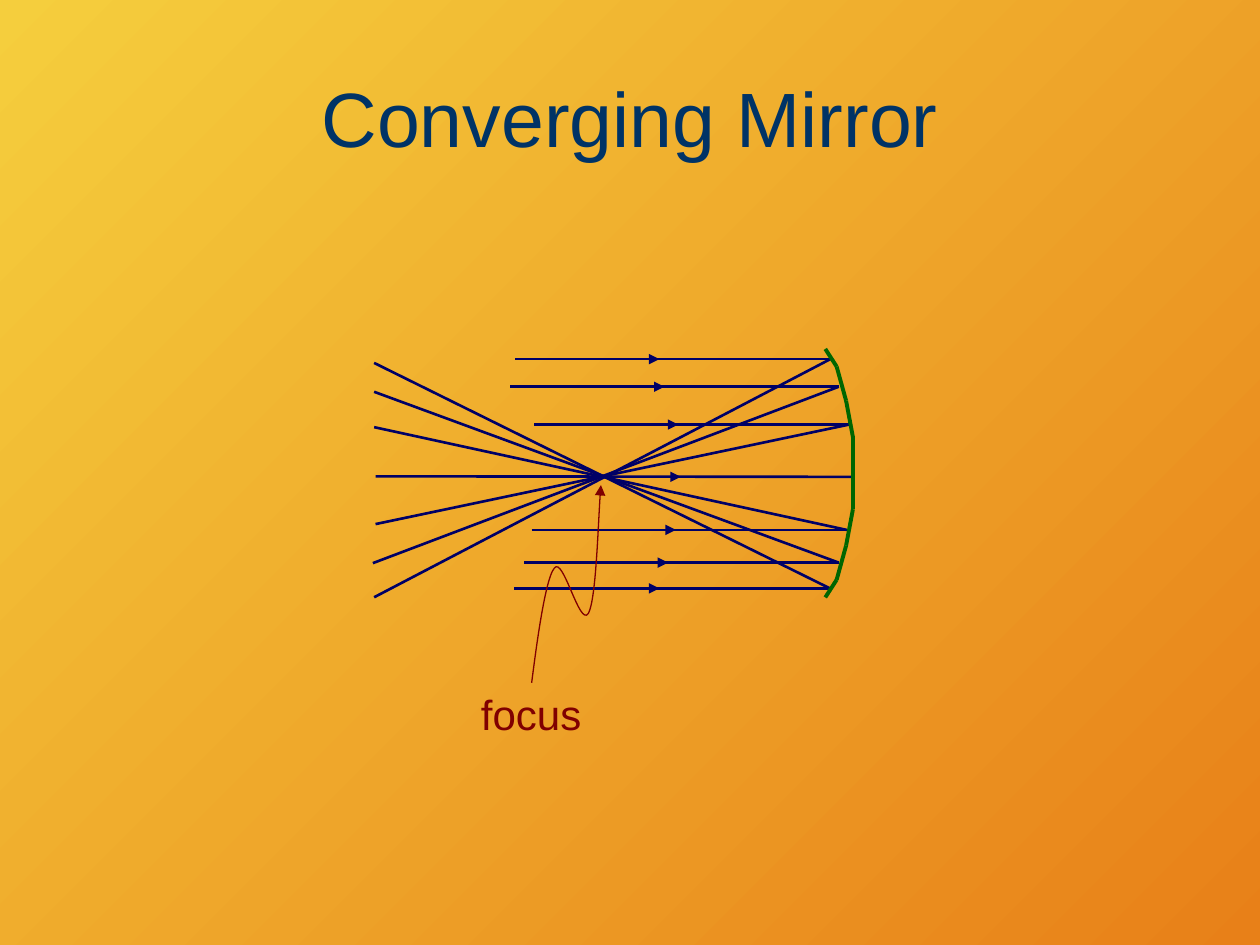
import pptx
import pptx.util
import pptx.dml.color
import pptx.enum.shapes
import pptx.enum.text
import pptx.oxml
import pptx.oxml.ns

Pt = pptx.util.Pt
qn = pptx.oxml.ns.qn
navy, maroon, green = "000066", "800000", "006600"


def paint(color, code):
    color.rgb = pptx.dml.color.RGBColor.from_string(code)


def draw(x1, y1, x2, y2, code, width, head=False):
    line = slide.shapes.add_connector(
        pptx.enum.shapes.MSO_CONNECTOR.STRAIGHT, Pt(x1), Pt(y1), Pt(x2), Pt(y2))
    paint(line.line.color, code)
    line.line.width = Pt(width)
    props = line._element.spPr
    pptx.oxml.ns.nsdecls("a")
    props.append(pptx.oxml.parse_xml(f"<a:effectLst {pptx.oxml.ns.nsdecls('a')}/>"))
    if head:
        props.find(qn("a:ln")).append(tip())


def tip():
    return pptx.oxml.parse_xml(
        f'<a:tailEnd {pptx.oxml.ns.nsdecls("a")} type="triangle"/>')


deck = pptx.Presentation()
deck.slide_width, deck.slide_height = Pt(720), Pt(540)
slide = deck.slides.add_slide(deck.slide_layouts[5])

back = slide.background.fill
back.gradient()
back.gradient_angle = 315
for stop, code in zip(back.gradient_stops, ("F5CE3D", "E88018")):
    paint(stop.color, code)

title = slide.shapes.title
title.left, title.top, title.width, title.height = Pt(36), Pt(21.6), Pt(648), Pt(90)
label = slide.shapes.add_textbox(Pt(267.8), Pt(390.2), Pt(72), Pt(36))
for shape, text, size, code, align, wrap in (
    (title, "Converging Mirror", 44, "003366", "CENTER", True),
    (label, "focus", 24, maroon, "LEFT", False),
):
    frame = shape.text_frame
    frame.word_wrap = wrap
    para = frame.paragraphs[0]
    para.alignment = pptx.enum.text.PP_ALIGN[align]
    run = para.add_run()
    run.text = text
    run.font.name = "Arial"
    run.font.size = Pt(size)
    paint(run.font.color, code)
title.text_frame.vertical_anchor = pptx.enum.text.MSO_ANCHOR.MIDDLE

rays = [
    (294.5, 352.8, 474.5, 205.2, 213.8, 341.3),
    (291.6, 355.7, 479.3, 221, 213.1, 321.8),
    (305.3, 363.6, 485.3, 242.6, 214.6, 299.5),
    (306.7, 365, 486.7, 272.5, 214.6, 272.2),
    (303.8, 362.2, 483.8, 302.8, 213.8, 244.1),
    (299.5, 357.8, 479.2, 321.5, 213.8, 223.9),
    (293.8, 352.8, 474.2, 336.2, 213.8, 207.4),
]
for start, mark, hit, y, end, low in rays:
    draw(start, y, hit, y, navy, 1.5)
    draw(mark, y, mark + 24, y, navy, 0.75, True)
    draw(hit, y, end, low, navy, 1.5)

curve = [
    (303.8, 390.2), (305.3, 379.4), (311, 331.2), (316.8, 324.7),
    (321.8, 317.5), (331.2, 358.6), (336.2, 350.6),
    (340.6, 342.7), (342, 292.3), (343.4, 277.2),
]
nodes = [(Pt(x), Pt(y)) for x, y in curve]
pen = slide.shapes.build_freeform(*nodes[0])
pen.add_line_segments(nodes[1:], close=False)
squig = pen.convert_to_shape()
squig.shadow.inherit = False
squig.fill.background()
paint(squig.line.color, maroon)
squig.line.width = Pt(0.75)
squig._element.spPr.find(qn("a:ln")).append(tip())
legs = list(squig._element.iter(qn("a:lnTo")))
for i in range(0, len(legs), 3):
    bend = pptx.oxml.parse_xml(f"<a:cubicBezTo {pptx.oxml.ns.nsdecls('a')}/>")
    legs[i].addprevious(bend)
    for leg in legs[i:i + 3]:
        bend.append(leg[0])
        leg.getparent().remove(leg)

half = [(471.6, 199.4), (478.1, 209.5), (483.5, 229), (487.4, 249.8)]
mirror = half + [(x, 540.8 - y) for x, y in reversed(half)]
for (x1, y1), (x2, y2) in zip(mirror, mirror[1:]):
    draw(x1, y1, x2, y2, green, 2.25)

deck.save("out.pptx")
